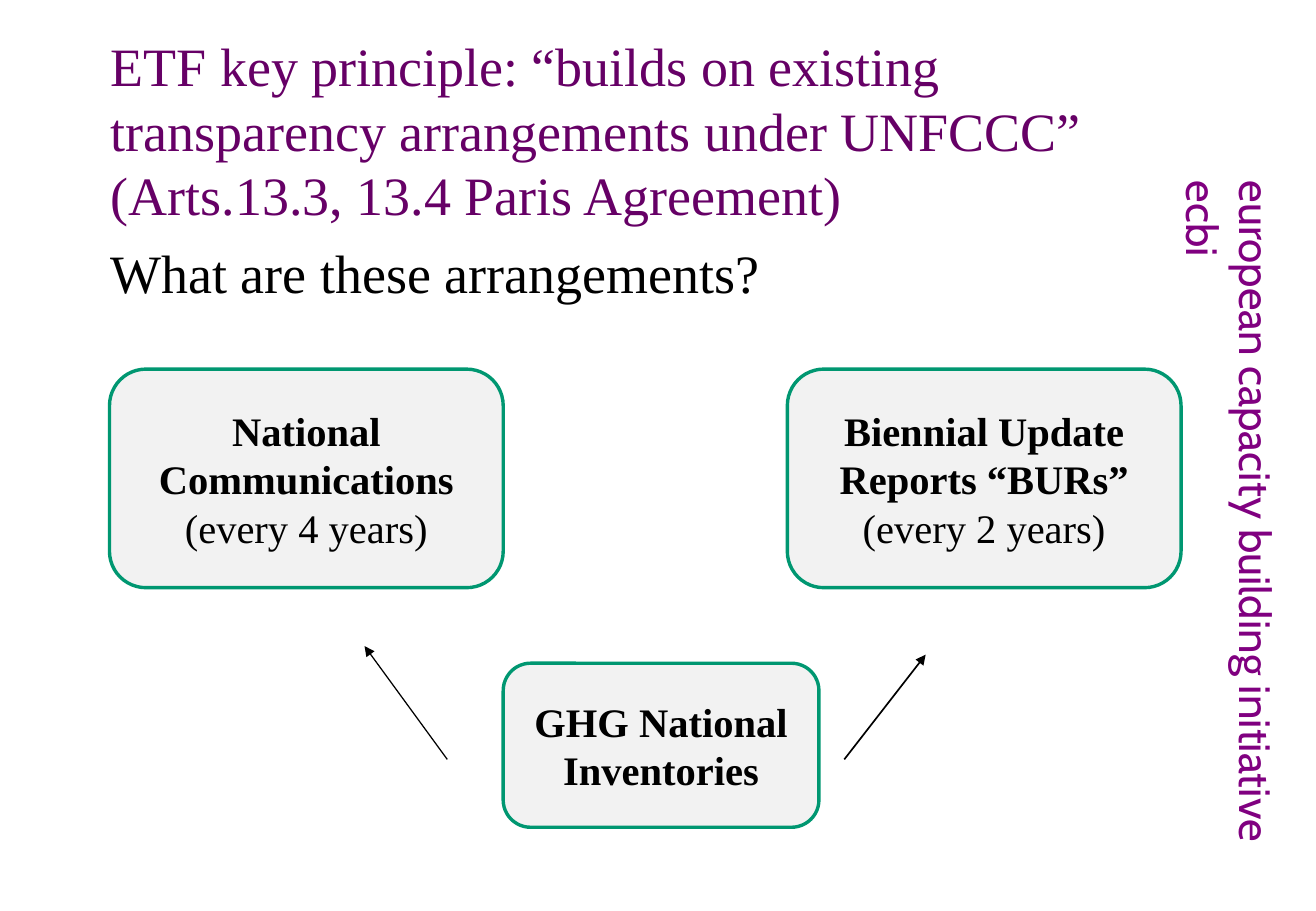
from dataclasses import dataclass

from lxml.etree import SubElement
from pptx import Presentation
from pptx.dml.color import RGBColor as RGB
from pptx.enum.shapes import MSO_CONNECTOR as CONNECTOR, MSO_SHAPE as SHAPE
from pptx.enum.text import MSO_ANCHOR as ANCHOR, MSO_AUTO_SIZE as AUTO_SIZE, PP_ALIGN as ALIGN
from pptx.oxml.ns import qn
from pptx.util import Cm, Pt


@dataclass(frozen=True)
class Theme:
    serif: str = "Times New Roman"
    sans: str = "Cabin"
    title: RGB = RGB(0x66, 0x00, 0x66)
    banner: RGB = RGB(0x80, 0x00, 0x80)
    ink: RGB = RGB(0x00, 0x00, 0x00)
    box_fill: RGB = RGB(0xF2, 0xF2, 0xF2)
    box_line: RGB = RGB(0x00, 0x97, 0x71)
    heading_size: Pt = Pt(32)
    banner_size: Pt = Pt(26)
    box_size: Pt = Pt(24)


THEME = Theme()
MARGIN, TEXT_WIDTH = 2.06, 23.39
REPORT_TOP, REPORT_WIDTH, REPORT_HEIGHT = 7.72, 8.23, 4.57


def style(p, size, color, name=THEME.serif, bold=False):
    p.font.name, p.font.size, p.font.bold = name, size, bold
    p.font.color.rgb = color


def place(sp, left, top, width, height):
    sp.left, sp.top, sp.width, sp.height = Cm(left), Cm(top), Cm(width), Cm(height)


def add_title(s, text):
    sp = s.shapes.title
    place(sp, MARGIN, 1.12, TEXT_WIDTH, 3.18)
    tf = sp.text_frame
    tf.text = text
    tf.auto_size, tf.vertical_anchor = AUTO_SIZE.NONE, ANCHOR.MIDDLE
    p = tf.paragraphs[0]
    p.alignment = ALIGN.LEFT
    style(p, THEME.heading_size, THEME.title)


def add_text(s, text, left, top, width, height, size, color, name=THEME.serif):
    sp = s.shapes.add_textbox(Cm(left), Cm(top), Cm(width), Cm(height))
    tf = sp.text_frame
    tf.word_wrap = True
    tf.text = text
    style(tf.paragraphs[0], size, color, name)
    return sp


def add_banner(s, text):
    """Text that runs down the right edge of the slide."""
    sp = add_text(s, text, 25.04, 3.53, 1.91, 15.21,
                  THEME.banner_size, THEME.banner, THEME.sans)
    sp.text_frame._txBody.bodyPr.set("vert", "eaVert")


def add_box(s, left, top, width, height, name, interval=None):
    sp = s.shapes.add_shape(SHAPE.ROUNDED_RECTANGLE, Cm(left), Cm(top), Cm(width), Cm(height))
    sp.shadow.inherit = False
    sp.fill.solid()
    sp.fill.fore_color.rgb = THEME.box_fill
    sp.line.color.rgb = THEME.box_line
    sp.line.width = Pt(2)
    tf = sp.text_frame
    tf.word_wrap, tf.vertical_anchor = True, ANCHOR.MIDDLE
    tf.text = f"{name}\n{interval}" if interval else name
    for i, p in enumerate(tf.paragraphs):
        p.alignment = ALIGN.CENTER
        style(p, THEME.box_size, THEME.ink, bold=i == 0)


def add_arrow(s, x1, y1, x2, y2, width):
    line = s.shapes.add_connector(CONNECTOR.STRAIGHT, Cm(x1), Cm(y1), Cm(x2), Cm(y2))
    line.line.color.rgb = THEME.ink
    line.line.width = Pt(width)
    SubElement(line.line._get_or_add_ln(), qn("a:tailEnd"), type="triangle")
    SubElement(line._element.spPr, qn("a:effectLst"))


def main():
    prs = Presentation()
    prs.slide_width, prs.slide_height = Cm(27.51), Cm(19.05)
    s = prs.slides.add_slide(prs.slide_layouts[5])

    add_banner(s, "european capacity building initiative ecbi")
    add_title(s, "ETF key principle: “builds on existing transparency arrangements "
                 "under UNFCCC” (Arts.13.3, 13.4 Paris Agreement)")
    add_text(s, "What are these arrangements?", MARGIN, 4.88, TEXT_WIDTH, 1.8,
             THEME.heading_size, THEME.ink)

    reports = [
        (16.46, "Biennial Update Reports “BURs”", "(every 2 years)"),
        (2.29, "National Communications", "(every 4 years)"),
    ]
    for left, name, interval in reports:
        add_box(s, left, REPORT_TOP, REPORT_WIDTH, REPORT_HEIGHT, name, interval)
    add_box(s, 10.52, 13.87, 6.6, 3.43, "GHG National Inventories")

    add_arrow(s, 17.65, 15.88, 19.35, 13.69, 1)
    add_arrow(s, 9.35, 15.88, 7.62, 13.51, 0.75)

    prs.save("out.pptx")


if __name__ == "__main__":
    main()
